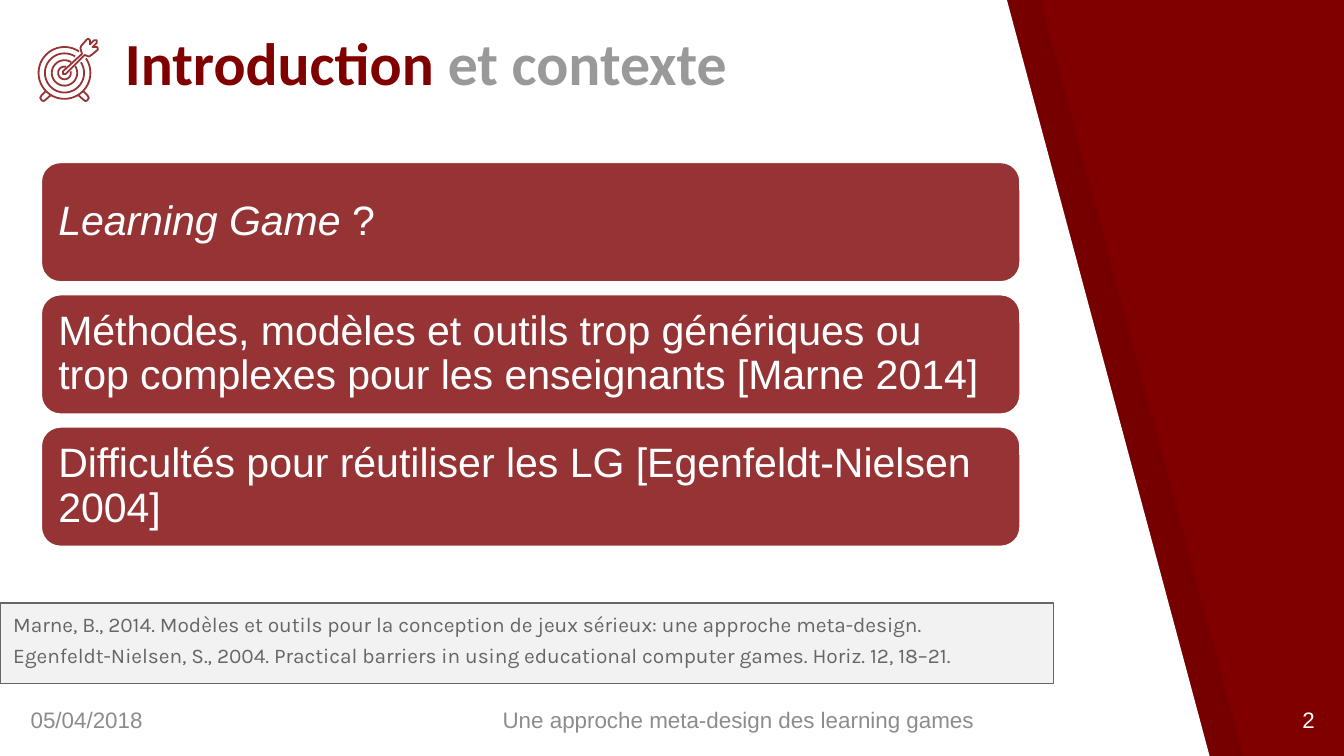
import dataclasses
import math

import lxml.etree
import pptx
import pptx.dml.color
import pptx.enum.shapes
import pptx.enum.text
import pptx.oxml.ns
import pptx.util

Cm = pptx.util.Cm
Pt = pptx.util.Pt
qn = pptx.oxml.ns.qn
ALIGN = pptx.enum.text.PP_ALIGN
ANCHOR = pptx.enum.text.MSO_ANCHOR


@dataclasses.dataclass(frozen=True)
class Theme:
    maroon: str = "800000"
    brick: str = "963334"
    white: str = "FFFFFF"
    shade: str = "000000"
    subtitle: str = "999999"
    footer: str = "8C8C8C"
    note: str = "666666"
    note_fill: str = "F2F2F2"
    title_font: str = "Calibri"
    text_font: str = "Arial"
    note_font: str = "Karla"
    title_size: float = 32
    card_size: float = 22
    note_size: float = 11.2
    footer_size: float = 12


def rgb(value):
    return pptx.dml.color.RGBColor.from_string(value)


def write(tf, paragraphs, font, size, color, bold=False, align=ALIGN.LEFT,
          anchor=ANCHOR.MIDDLE, inset=None, spacing=None, before=0):
    tf.word_wrap = True
    tf.auto_size = pptx.enum.text.MSO_AUTO_SIZE.NONE
    tf.vertical_anchor = anchor
    if inset is not None:
        tf.margin_left = tf.margin_right = Cm(inset)
        tf.margin_top = tf.margin_bottom = Cm(inset)
    for i, runs in enumerate(paragraphs):
        p = tf.add_paragraph() if i else tf.paragraphs[0]
        p.alignment = align
        p.line_spacing = spacing
        p.space_before = Pt(before)
        for text, change in runs:
            r = p.add_run()
            r.text = text
            r.font.name = font
            r.font.size = Pt(size)
            r.font.bold = bold
            r.font.italic = change.get("italic", False)
            r.font.color.rgb = rgb(change.get("color", color))


class Deck:
    def __init__(self, theme, width, height):
        self.theme = theme
        self.width, self.height = width, height
        self.prs = pptx.Presentation()
        self.prs.slide_width, self.prs.slide_height = Cm(width), Cm(height)
        self.s = self.prs.slides.add_slide(self.prs.slide_layouts[1])
        self.s.background.fill.solid()
        self.s.background.fill.fore_color.rgb = rgb(theme.maroon)

    def paint(self, sp, fill=None, line=None, weight=1):
        if fill:
            sp.fill.solid()
            sp.fill.fore_color.rgb = rgb(fill)
        else:
            sp.fill.background()
        if line:
            sp.line.color.rgb = rgb(line)
            sp.line.width = Pt(weight)
        else:
            sp.line.fill.background()

    def place(self, sp, left, top, width, height):
        sp.left, sp.top, sp.width, sp.height = map(Cm, (left, top, width, height))

    def outline(self, points, close=False, **style):
        start, *rest = [(Cm(x), Cm(y)) for x, y in points]
        builder = self.s.shapes.build_freeform(*start)
        builder.add_line_segments(rest, close=close)
        sp = builder.convert_to_shape()
        sp.shadow.inherit = False
        self.paint(sp, **style)
        return sp

    def backdrop(self, left, color, opacity=100):
        points = [(left, 0), (left, self.height),
                  (left + 22.86, self.height), (left + 19.03, 0)]
        sp = self.outline(points, close=True, fill=color)
        if opacity < 100:
            clr = sp.element.spPr.find(".//" + qn("a:srgbClr"))
            alpha = lxml.etree.SubElement(clr, qn("a:alpha"))
            alpha.set("val", str(opacity * 1000))
        self.s.shapes.title.element.addprevious(sp.element)

    def title(self, runs):
        t = self.theme
        sp = self.s.shapes.title
        self.place(sp, 2.11, 0.74, 15.6, 1.35)
        write(sp.text_frame, [runs], t.title_font, t.title_size, t.maroon,
              bold=True, anchor=ANCHOR.BOTTOM, inset=0.25)

    def references(self, entries):
        t = self.theme
        sp = self.s.placeholders[1]
        self.place(sp, 0, 11.4, 19.91, 1.52)
        self.paint(sp, t.note_fill, t.note, 0.75)
        write(sp.text_frame, [[(entry, {})] for entry in entries],
              t.note_font, t.note_size, t.note, anchor=ANCHOR.TOP,
              inset=0.25, spacing=0.8, before=6)
        for p in sp.text_frame.paragraphs:
            pPr = p._p.get_or_add_pPr()
            pPr.set("marL", "0")
            pPr.set("indent", "0")
            lxml.etree.SubElement(pPr, qn("a:buNone"))

    def card(self, top, runs):
        t = self.theme
        sp = self.s.shapes.add_shape(
            pptx.enum.shapes.MSO_SHAPE.ROUNDED_RECTANGLE,
            Cm(0.76), Cm(top), Cm(18.54), Cm(2.3))
        sp.shadow.inherit = False
        self.paint(sp, t.brick, t.white, 2)
        write(sp.text_frame, [runs], t.text_font, t.card_size, t.white,
              inset=0.23, spacing=0.9)

    def footer(self, text, left, width, color, align=ALIGN.LEFT):
        t = self.theme
        sp = self.s.shapes.add_textbox(Cm(left), Cm(13.23), Cm(width), Cm(0.76))
        write(sp.text_frame, [[(text, {})]], t.text_font, t.footer_size,
              color, align=align)

    def target(self, cx, cy):
        pen = {"line": self.theme.brick, "weight": 0.96}
        for radius, gap in ((0.49, 11), (0.37, 12), (0.24, 13), (0.12, 31)):
            steps = 60
            sweep = 360 - 2 * gap
            angles = [math.radians(gap - 45 + sweep * i / steps)
                      for i in range(steps + 1)]
            self.outline([(cx + radius * math.cos(a), cy + radius * math.sin(a))
                          for a in angles], **pen)
        foot = [(-0.36, 0.35), (-0.43, 0.42), (-0.46, 0.47), (-0.43, 0.52),
                (-0.39, 0.53), (-0.35, 0.5), (-0.26, 0.42)]
        for side in (1, -1):
            self.outline([(cx + side * x, cy + y) for x, y in foot], **pen)
        arrow = [(0.61, -0.49), (0.53, -0.49), (0.61, -0.57), (0.61, -0.62),
                 (0.56, -0.62), (0.48, -0.54), (0.48, -0.62), (0.46, -0.64),
                 (0.43, -0.64), (0.32, -0.52), (0.3, -0.47), (0.33, -0.36),
                 (-0.03, -0.03), (-0.03, 0.02), (0.02, 0.02), (0.38, -0.34),
                 (0.46, -0.31), (0.51, -0.34), (0.63, -0.44), (0.63, -0.47)]
        self.outline([(cx + x, cy + y) for x, y in arrow], close=True, **pen)


def main():
    t = Theme()
    deck = Deck(t, 25.4, 14.29)
    deck.backdrop(0.64, t.shade, opacity=7)
    deck.backdrop(0, t.white)
    deck.title([("Introduction", {}), (" et contexte", {"color": t.subtitle})])
    cards = [
        [("Learning Game ", {"italic": True}), ("?", {})],
        [("Méthodes, modèles et outils trop génériques ou trop complexes "
          "pour les enseignants [Marne 2014]", {})],
        [("Difficultés pour réutiliser les LG [Egenfeldt-Nielsen 2004]", {})],
    ]
    for i, runs in enumerate(cards):
        deck.card(3.05 + 2.5 * i, runs)
    deck.references([
        "Marne, B., 2014. Modèles et outils pour la conception de jeux "
        "sérieux: une approche meta-design.",
        "Egenfeldt-Nielsen, S., 2004. Practical barriers in using educational "
        "computer games. Horiz. 12, 18–21.",
    ])
    deck.footer("05/04/2018", 0.33, 6.76, t.footer)
    deck.footer("Une approche meta-design des learning games", 9.25, 12.88, t.footer)
    deck.footer("2", 23.6, 1.5, t.white, align=ALIGN.RIGHT)
    deck.target(1.22, 1.38)
    deck.prs.save("out.pptx")


if __name__ == "__main__":
    main()
